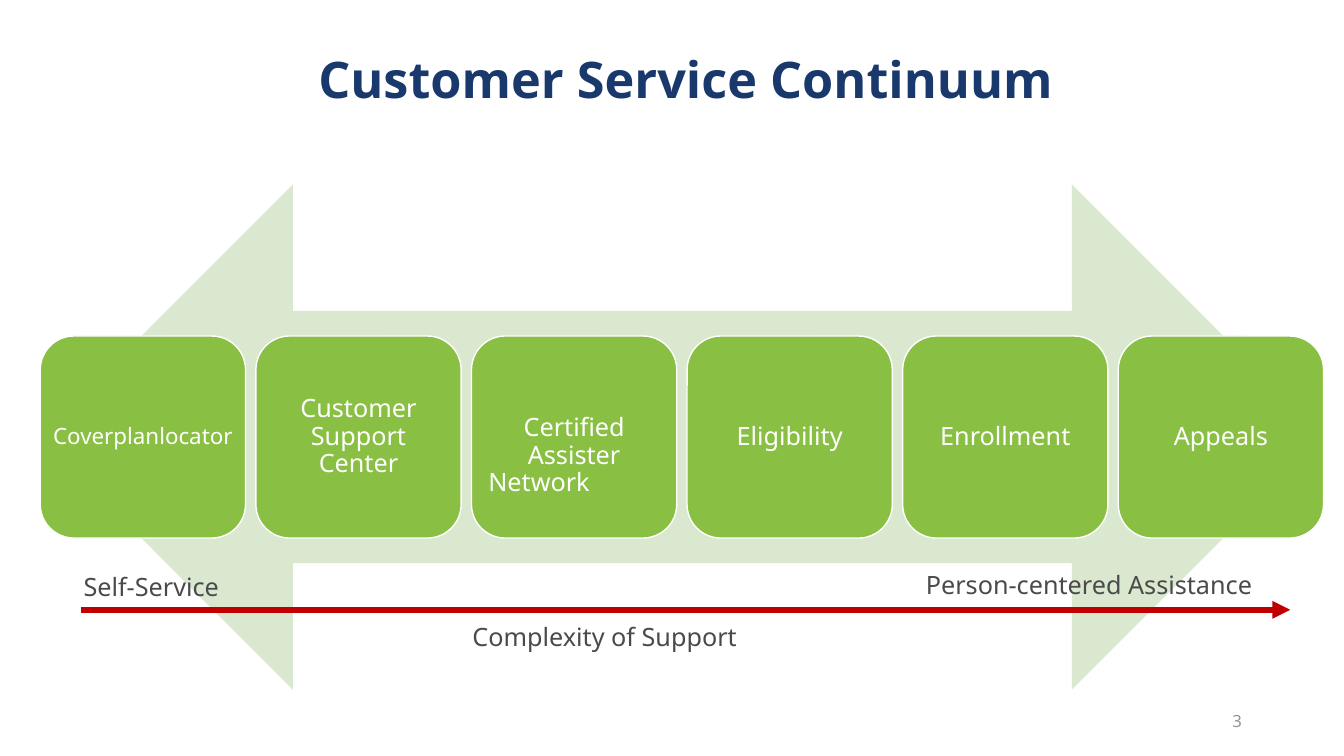
from pptx import Presentation
from pptx.dml.color import RGBColor
from pptx.enum.shapes import MSO_CONNECTOR, MSO_SHAPE
from pptx.enum.text import MSO_ANCHOR, PP_ALIGN
from pptx.oxml.ns import qn
from pptx.util import Pt
from lxml.etree import SubElement

FONT = "Noto Sans"
NAVY, GREEN, PALE, RED = "19386B", "89BF42", "DAE8CF", "C00000"
WHITE, DARK, GREY = "FFFFFF", "4A4A4A", "969696"
LEFT, MID, RIGHT = PP_ALIGN.LEFT, PP_ALIGN.CENTER, PP_ALIGN.RIGHT
TOP, HALF = MSO_ANCHOR.TOP, MSO_ANCHOR.MIDDLE

# paragraphs (text, alignment), size, side inset, top inset
CARDS = [
    ([("Coverplanlocator", MID)], 16, 0, 5),
    ([("Customer Support Center", MID)], 18, 5, 5),
    ([("Certified Assister", MID), ("Network", LEFT)], 18, 5, 32),
    ([("Eligibility", MID)], 18, 5, 5),
    ([("Enrollment", MID)], 18, 5, 5),
    ([("Appeals", MID)], 18, 5, 5),
]
# text, left, top, width, height, size, colour, bold, alignment, anchor, spacing
LABELS = [
    ("Customer Service Continuum", 220.3, 28, 554.4, 62, 36, NAVY, True, LEFT, HALF, 0.9),
    ("3", 678.2, 500.4, 216, 28.8, 12, GREY, False, RIGHT, HALF, 1),
    ("Self-Service", 52.6, 404.6, 132.5, 29, 18, DARK, False, LEFT, TOP, 1),
    ("Person-centered Assistance", 654.3, 403.2, 285, 29, 18, DARK, False, LEFT, TOP, 1),
    ("Complexity of Support", 330.4, 440, 245.5, 29, 18, DARK, False, LEFT, TOP, 1),
]
ARROW = (28.8, 131.8, 917.3, 360.7)
CARD_W, CARD_H, PITCH = 146.6, 144.3, 154
AXIS = (57.6, 921.6, 435.6)


def paint(form, color):
    """Set the colour of a fill, line fill or font."""
    if hasattr(form, "solid"):
        form.solid()
        form = form.fore_color
    form.rgb = RGBColor.from_string(color)


def write(frame, parts, size, color, bold=False, space=1.0):
    frame.word_wrap = True
    frame.text = "\n".join(text for text, _ in parts)
    for para, (_, align) in zip(frame.paragraphs, parts):
        para.alignment = align
        para.line_spacing = space
        for run in para.runs:
            run.font.name = FONT
            run.font.size = Pt(size)
            run.font.bold = bold
            paint(run.font.color, color)


def add_form(slide, kind, box, fill):
    form = slide.shapes.add_shape(kind, *map(Pt, box))
    form.shadow.inherit = False
    paint(form.fill, fill)
    return form


def add_cards(slide):
    x, y, _, high = ARROW
    top = y + (high - CARD_H) / 2
    for i, (parts, size, side, head) in enumerate(CARDS):
        box = (x + i * PITCH, top, CARD_W, CARD_H)
        card = add_form(slide, MSO_SHAPE.ROUNDED_RECTANGLE, box, GREEN)
        paint(card.line.fill, WHITE)
        card.line.width = Pt(1)
        frame = card.text_frame
        frame.margin_left = frame.margin_right = Pt(side)
        frame.margin_top, frame.margin_bottom = Pt(head), Pt(5)
        frame.vertical_anchor = HALF
        write(frame, parts, size, WHITE, space=0.9)


def add_axis(slide):
    start, end, y = map(Pt, AXIS)
    axis = slide.shapes.add_connector(MSO_CONNECTOR.STRAIGHT, start, y, end, y)
    paint(axis.line.fill, RED)
    axis.line.width = Pt(4.25)
    props = axis._element.spPr
    SubElement(props.find(qn("a:ln")), qn("a:tailEnd"), type="triangle")
    SubElement(props, qn("a:effectLst"))


def main():
    deck = Presentation()
    deck.slide_width, deck.slide_height = Pt(960), Pt(540)
    slide = deck.slides.add_slide(deck.slide_layouts[6])
    arrow = add_form(slide, MSO_SHAPE.LEFT_RIGHT_ARROW, ARROW, PALE)
    arrow.line.fill.background()
    add_cards(slide)
    add_axis(slide)
    for text, x, y, wide, high, size, color, bold, align, anchor, space in LABELS:
        label = slide.shapes.add_textbox(Pt(x), Pt(y), Pt(wide), Pt(high))
        label.text_frame.vertical_anchor = anchor
        write(label.text_frame, [(text, align)], size, color, bold, space)
    deck.save("out.pptx")


if __name__ == "__main__":
    main()
